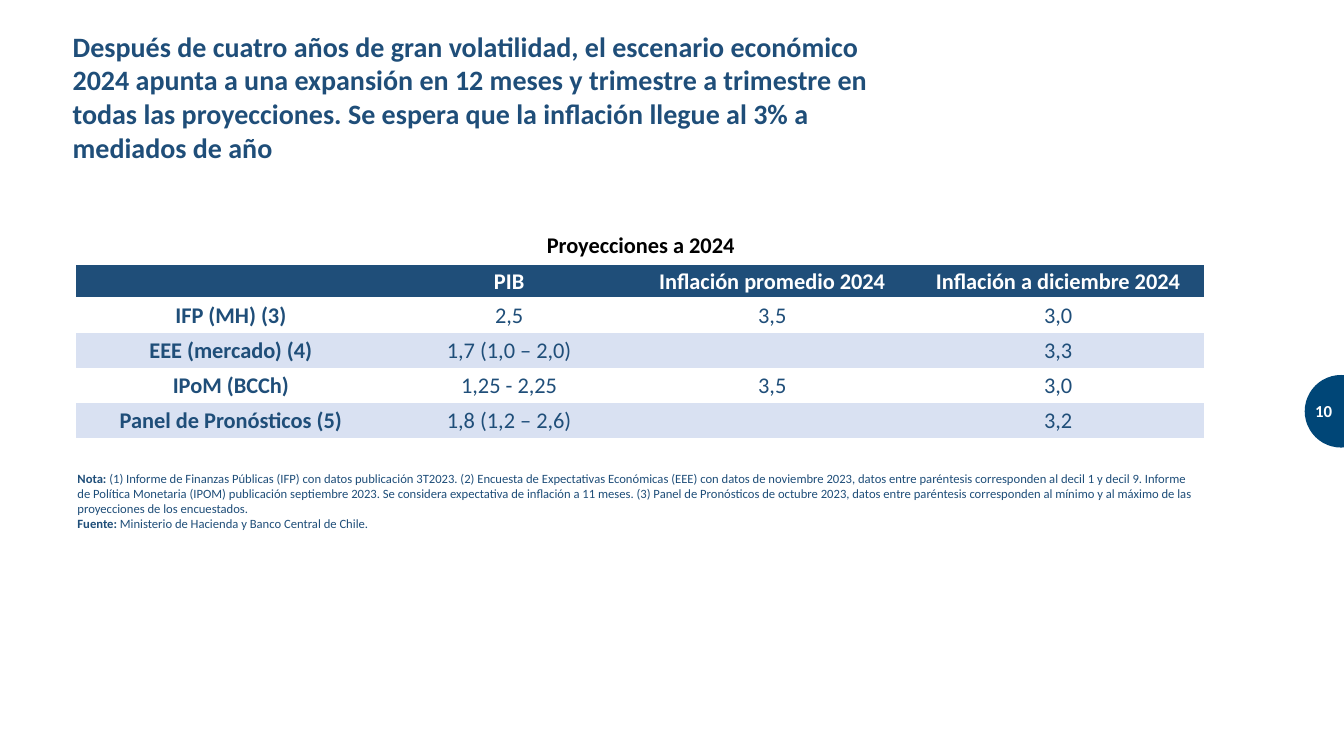
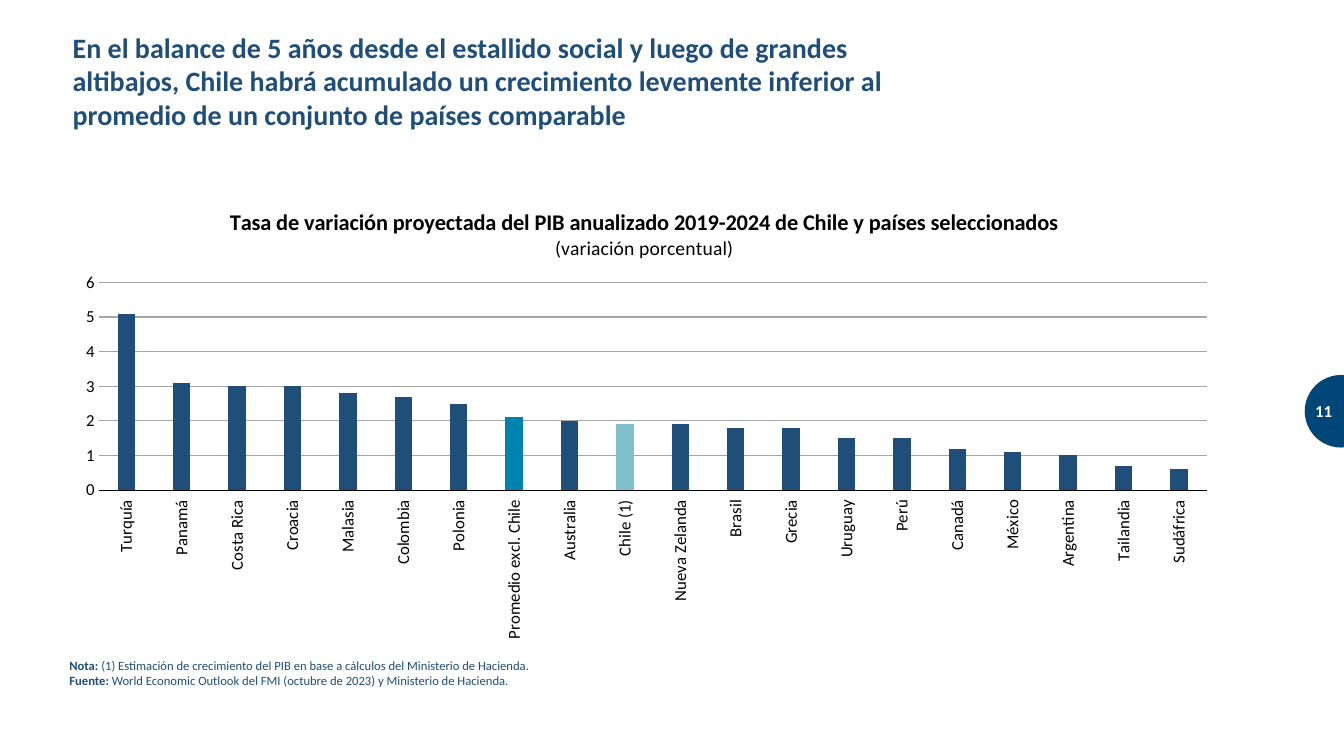
"""Build two slides on the 2024 economic outlook: a projections table and a growth chart."""
from dataclasses import dataclass

from lxml.etree import SubElement
from pptx import Presentation
from pptx.chart.data import CategoryChartData
from pptx.dml.color import RGBColor
from pptx.enum.chart import XL_CHART_TYPE, XL_TICK_LABEL_POSITION, XL_TICK_MARK
from pptx.enum.shapes import MSO_SHAPE
from pptx.enum.text import MSO_ANCHOR, MSO_AUTO_SIZE, PP_ALIGN
from pptx.oxml.ns import qn
from pptx.util import Inches, Pt


@dataclass(frozen=True)
class Theme:
    font: str = "Calibri"
    navy: str = "1F4E79"
    badge: str = "004677"
    band: str = "D9E1F2"
    average: str = "0082AF"
    chile: str = "80C0CD"
    grid: str = "A6A6A6"
    black: str = "000000"
    white: str = "FFFFFF"
    title: int = 20
    heading: int = 16
    subtitle: int = 14
    label: int = 12
    note: int = 9


THEME = Theme()
NO_TABLE_STYLE = "{2D5ABB26-0587-4C30-8999-92F81FD0307C}"

OUTLOOK = {
    "number": 10,
    "title": "Después de cuatro años de gran volatilidad, el escenario económico 2024 apunta a una "
             "expansión en 12 meses y trimestre a trimestre en todas las proyecciones. Se espera que "
             "la inflación llegue al 3% a mediados de año",
    "title_box": (0.62, 0.24, 8.42, 1.45),
    "notes": [
        ("Nota: ", "(1) Informe de Finanzas Públicas (IFP) con datos publicación 3T2023. (2) Encuesta de "
                   "Expectativas Económicas (EEE) con datos de noviembre 2023, datos entre paréntesis "
                   "corresponden al decil 1 y decil 9. Informe de Política Monetaria (IPOM) publicación "
                   "septiembre 2023. Se considera expectativa de inflación a 11 meses. (3) Panel de "
                   "Pronósticos de octubre 2023, datos entre paréntesis corresponden al mínimo y al "
                   "máximo de las proyecciones de los encuestados."),
        ("Fuente: ", "Ministerio de Hacienda y Banco Central de Chile."),
    ],
    "notes_box": (0.67, 4.62, 11.27, 0.71),
}
PROJECTIONS_HEADING = "Proyecciones a 2024"
PROJECTIONS = [
    ("", "PIB", "Inflación promedio 2024", "Inflación a diciembre 2024"),
    ("IFP (MH) (3)", "2,5", "3,5", "3,0"),
    ("EEE (mercado) (4)", "1,7 (1,0 – 2,0)", "", "3,3"),
    ("IPoM (BCCh)", "1,25 - 2,25", "3,5", "3,0"),
    ("Panel de Pronósticos (5)", "1,8 (1,2 – 2,6)", "", "3,2"),
]
COLUMN_WIDTHS = (3.08, 2.44, 2.78, 2.89)
HEADER_HEIGHT, ROW_HEIGHT = 0.32, 0.35

GROWTH = {
    "number": 11,
    "title": "En el balance de 5 años desde el estallido social y luego de grandes altibajos, Chile habrá "
             "acumulado un crecimiento levemente inferior al promedio de un conjunto de países comparable",
    "title_box": (0.62, 0.25, 8.3, 1.11),
    "notes": [
        ("Nota: ", "(1) Estimación de crecimiento del PIB en base a cálculos del Ministerio de Hacienda."),
        ("Fuente: ", "World Economic Outlook del FMI (octubre de 2023) y Ministerio de Hacienda."),
    ],
    "notes_box": (0.59, 6.48, 11.92, 0.4),
}
GROWTH_HEADING = "Tasa de variación proyectada del PIB anualizado 2019-2024 de Chile y países seleccionados"
GROWTH_UNIT = "(variación porcentual)"
GROWTH_RATES = {
    "Turquía": 5.1, "Panamá": 3.1, "Costa Rica": 3, "Croacia": 3, "Malasia": 2.8,
    "Colombia": 2.7, "Polonia": 2.5, "Promedio excl. Chile": 2.1, "Australia": 2,
    "Chile (1)": 1.9, "Nueva Zelanda": 1.9, "Brasil": 1.8, "Grecia": 1.8, "Uruguay": 1.5,
    "Perú": 1.5, "Canadá": 1.2, "México": 1.1, "Argentina": 1, "Tailandia": 0.7, "Sudáfrica": 0.6,
}
HIGHLIGHTS = {"Promedio excl. Chile": THEME.average, "Chile (1)": THEME.chile}


def box(left, top, width, height):
    return Inches(left), Inches(top), Inches(width), Inches(height)


def paint(fill, color):
    fill.solid()
    fill.fore_color.rgb = RGBColor.from_string(color)


def style_font(font, size, color=THEME.black, bold=False):
    font.name, font.size, font.bold = THEME.font, Pt(size), bold
    font.color.rgb = RGBColor.from_string(color)


def write(frame, paragraphs, size, color=THEME.black, bold=False, align=PP_ALIGN.LEFT,
          anchor=MSO_ANCHOR.TOP):
    """Write paragraphs given as strings or as (bold lead, plain text) pairs."""
    frame.word_wrap = True
    frame.vertical_anchor = anchor
    for index, content in enumerate(paragraphs):
        paragraph = frame.add_paragraph() if index else frame.paragraphs[0]
        paragraph.alignment = align
        parts = [(content, bold)] if isinstance(content, str) else zip(content, (True, False))
        for words, weight in parts:
            run = paragraph.add_run()
            run.text = words
            style_font(run.font, size, color, weight)


def add_text(slide, position, paragraphs, size, **style):
    write(slide.shapes.add_textbox(*box(*position)).text_frame, paragraphs, size, **style)


def add_page(deck, page):
    slide = deck.slides.add_slide(deck.slide_layouts.get_by_name("Title Only"))
    title = slide.shapes.title
    title.left, title.top, title.width, title.height = box(*page["title_box"])
    write(title.text_frame, [page["title"]], THEME.title, color=THEME.navy, bold=True)
    title.text_frame.auto_size = MSO_AUTO_SIZE.NONE
    add_text(slide, page["notes_box"], page["notes"], THEME.note, color=THEME.navy)
    badge = slide.shapes.add_shape(MSO_SHAPE.OVAL, *box(12.94, 3.72, 0.72, 0.72))
    badge.shadow.inherit = False
    paint(badge.fill, THEME.badge)
    badge.line.fill.background()
    add_text(slide, (12.86, 3.88, 0.45, 0.4), [str(page["number"])], THEME.label, color=THEME.white,
             bold=True, align=PP_ALIGN.RIGHT, anchor=MSO_ANCHOR.MIDDLE)
    return slide


def add_projections(slide):
    add_text(slide, (0.79, 2.24, 11.13, 0.37), [PROJECTIONS_HEADING], THEME.heading, bold=True,
             align=PP_ALIGN.CENTER)
    height = HEADER_HEIGHT + ROW_HEIGHT * (len(PROJECTIONS) - 1)
    frame = slide.shapes.add_table(len(PROJECTIONS), len(COLUMN_WIDTHS),
                                   *box(0.75, 2.63, sum(COLUMN_WIDTHS), height))
    frame.element.find(".//" + qn("a:tableStyleId")).text = NO_TABLE_STYLE
    table = frame.table
    for column, width in zip(table.columns, COLUMN_WIDTHS):
        column.width = Inches(width)
    for r, values in enumerate(PROJECTIONS):
        header = r == 0
        table.rows[r].height = Inches(HEADER_HEIGHT if header else ROW_HEIGHT)
        for c, value in enumerate(values):
            cell = table.cell(r, c)
            cell.margin_left = cell.margin_right = cell.margin_top = Inches(0.01)
            cell.margin_bottom = 0
            cell.vertical_anchor = MSO_ANCHOR.MIDDLE
            if header or r % 2 == 0:
                paint(cell.fill, THEME.navy if header else THEME.band)
            else:
                cell.fill.background()
            write(cell.text_frame, [value], THEME.heading, bold=header or c == 0,
                  color=THEME.white if header else THEME.navy, align=PP_ALIGN.CENTER,
                  anchor=MSO_ANCHOR.MIDDLE)


def place(element, **fractions):
    """Fix a chart part at fractions of the chart area."""
    layout = element.find(qn("c:layout"))
    if layout is None:
        layout = element.makeelement(qn("c:layout"))
        text = element.find(qn("c:tx"))
        if text is None:
            element.insert(0, layout)
        else:
            text.addnext(layout)
    manual = SubElement(layout, qn("c:manualLayout"))
    settings = {"xMode": "edge", "yMode": "edge", **fractions}
    if "w" in fractions:
        settings = {"layoutTarget": "inner", **settings}
    for name, value in settings.items():
        SubElement(manual, qn("c:" + name)).set("val", str(value))


def add_growth(slide):
    rates = CategoryChartData()
    rates.categories = list(GROWTH_RATES)
    rates.add_series("Series 1", list(GROWTH_RATES.values()))
    chart = slide.shapes.add_chart(XL_CHART_TYPE.COLUMN_CLUSTERED, *box(0.63, 1.84, 11.57, 4.58),
                                   rates).chart
    chart.has_legend = False
    style_font(chart.font, THEME.label)

    heading = chart.chart_title
    write(heading.text_frame, [GROWTH_HEADING, GROWTH_UNIT], THEME.heading, bold=True,
          align=PP_ALIGN.CENTER)
    style_font(heading.text_frame.paragraphs[1].runs[0].font, THEME.subtitle)
    heading.include_in_layout = False
    place(heading._element, x=0.14, y=0.04)
    place(chart._chartSpace.chart.plotArea, x=0.03, y=0.21, w=0.95, h=0.45)

    plot = chart.plots[0]
    plot.gap_width, plot.overlap, plot.vary_by_categories = 219, -27, False
    bars = plot.series[0]
    paint(bars.format.fill, THEME.navy)
    for country, color in HIGHLIGHTS.items():
        paint(bars.points[list(GROWTH_RATES).index(country)].format.fill, color)

    countries, percent = chart.category_axis, chart.value_axis
    for axis in (countries, percent):
        axis.major_tick_mark = axis.minor_tick_mark = XL_TICK_MARK.NONE
        style_font(axis.tick_labels.font, THEME.label)
    countries.tick_label_position = XL_TICK_LABEL_POSITION.LOW
    rotation = countries._element.find(qn("c:txPr")).find(qn("a:bodyPr"))
    rotation.set("rot", "-5400000")
    rotation.set("vert", "horz")
    percent.minimum_scale, percent.maximum_scale, percent.major_unit = 0, 6, 1
    percent.tick_labels.number_format = "#,##0"
    percent.tick_labels.number_format_is_linked = False
    percent.format.line.fill.background()
    for line, color in ((countries.format.line, THEME.black),
                        (percent.major_gridlines.format.line, THEME.grid)):
        line.width = Pt(0.75)
        paint(line.fill, color)


def main():
    deck = Presentation()
    deck.slide_width, deck.slide_height = Inches(13.33), Inches(7.5)
    add_projections(add_page(deck, OUTLOOK))
    add_growth(add_page(deck, GROWTH))
    deck.save("out.pptx")


if __name__ == "__main__":
    main()
